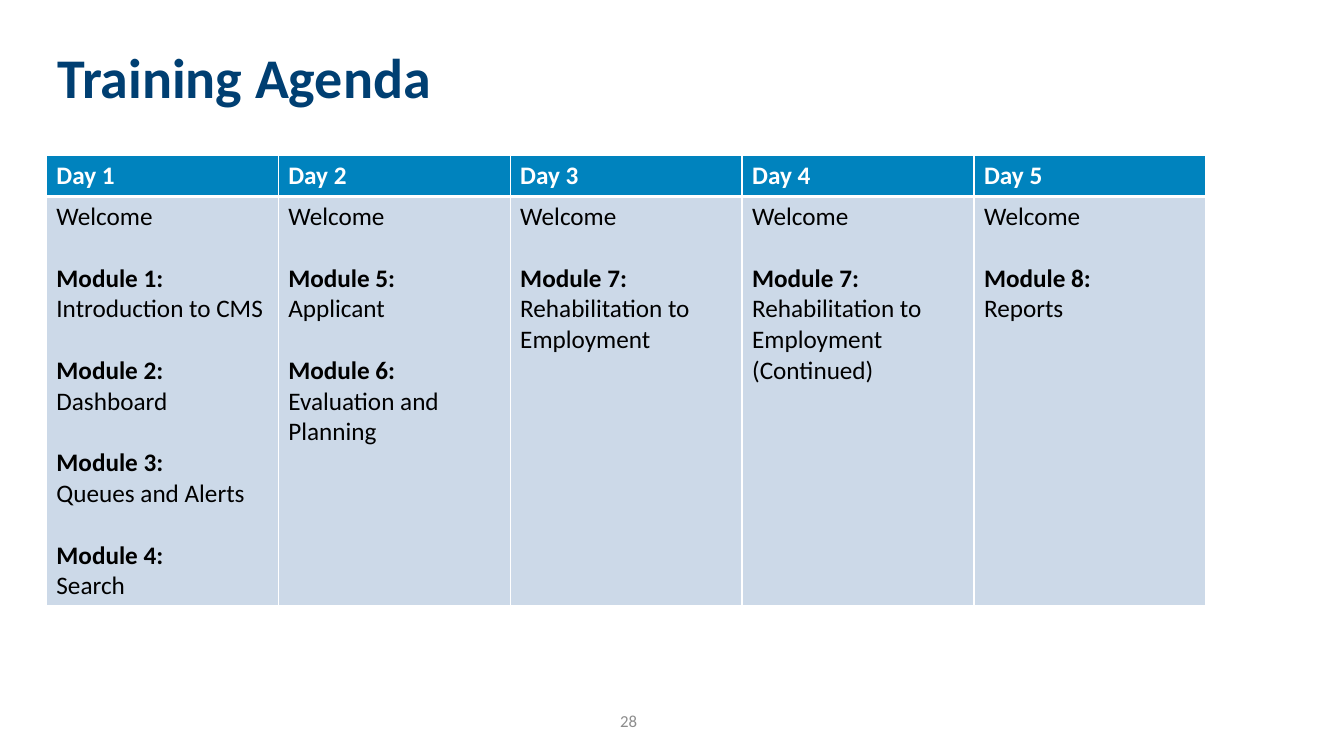
from lxml.etree import SubElement
from pptx import Presentation
from pptx.dml.color import RGBColor
from pptx.enum.text import MSO_ANCHOR as Anchor, PP_ALIGN as Align
from pptx.oxml.ns import qn
from pptx.util import Inches, Pt

NAVY, BLUE, PALE = "003F72", "0083BE", "CCD9E8"
WHITE, BLACK, GREY = "FFFFFF", "000000", "8C8C8C"

# Each entry is a module; a line break starts its topic in a new paragraph
AGENDA = {
    "Day 1": ["Module 1: Introduction to CMS", "Module 2:\nDashboard",
              "Module 3:\nQueues and Alerts", "Module 4:\nSearch"],
    "Day 2": ["Module 5:\nApplicant", "Module 6: Evaluation and Planning"],
    "Day 3": ["Module 7: Rehabilitation to Employment"],
    "Day 4": ["Module 7: Rehabilitation to Employment (Continued)"],
    "Day 5": ["Module 8:\nReports"],
}


def color(hex_code):
    return RGBColor.from_string(hex_code)


def add_run(paragraph, text, size=18, fill=BLACK, bold=False):
    run = paragraph.add_run()
    run.text = text
    run.font.name = "Calibri"
    run.font.size = Pt(size)
    run.font.bold = bold
    run.font.color.rgb = color(fill)


def add_label(slide, text, left, top, width, height, align=Align.LEFT,
              line_spacing=1.0, **style):
    frame = slide.shapes.add_textbox(
        Inches(left), Inches(top), Inches(width), Inches(height)).text_frame
    frame.word_wrap = True
    frame.vertical_anchor = Anchor.MIDDLE
    paragraph = frame.paragraphs[0]
    paragraph.alignment = align
    paragraph.line_spacing = line_spacing
    add_run(paragraph, text, **style)


def style_cell(cell, fill, top=1, bottom=1):
    """White borders, with widths in points, and a solid fill."""
    properties = cell._tc.get_or_add_tcPr()
    for side, width in (("L", 1), ("R", 1), ("T", top), ("B", bottom)):
        line = SubElement(properties, qn(f"a:ln{side}"), w=str(Pt(width)))
        solid = SubElement(line, qn("a:solidFill"))
        SubElement(solid, qn("a:srgbClr"), val=WHITE)
    cell.fill.solid()
    cell.fill.fore_color.rgb = color(fill)


def fill_day(cell, modules):
    frame = cell.text_frame
    add_run(frame.paragraphs[0], "Welcome")
    for module in modules:
        for index, line in enumerate(module.split("\n")):
            paragraph = frame.add_paragraph()
            # One line's height separates the modules
            paragraph.space_before = Pt(0 if index else 22)
            name, colon, topic = line.partition(":")
            add_run(paragraph, name + colon, bold=bool(colon))
            if topic:
                add_run(paragraph, topic)


def add_agenda(slide, left, top, width, header_height, body_height):
    table = slide.shapes.add_table(
        2, len(AGENDA), Inches(left), Inches(top), Inches(width),
        Inches(header_height + body_height)).table
    table.horz_banding = False
    table.rows[0].height = Inches(header_height)
    table.rows[1].height = Inches(body_height)
    for column, (day, modules) in enumerate(AGENDA.items()):
        header, body = table.cell(0, column), table.cell(1, column)
        style_cell(header, BLUE, bottom=3)
        style_cell(body, PALE, top=3)
        add_run(header.text_frame.paragraphs[0], day, fill=WHITE, bold=True)
        fill_day(body, modules)


def build_agenda_slide(presentation):
    slide = presentation.slides.add_slide(presentation.slide_layouts[6])
    # Title
    add_label(slide, "Training Agenda", 0.47, 0.37, 10.62, 0.85,
              line_spacing=0.9, size=40, fill=NAVY, bold=True)
    # Five-day table
    add_agenda(slide, 0.46, 1.54, 11.5, 0.41, 4.06)
    # Slide number
    add_label(slide, "28", 5.86, 6.95, 0.75, 0.4, align=Align.CENTER,
              size=12, fill=GREY)


def main():
    presentation = Presentation()
    presentation.slide_width = Inches(13.33)
    presentation.slide_height = Inches(7.5)
    build_agenda_slide(presentation)
    presentation.save("out.pptx")


if __name__ == "__main__":
    main()
